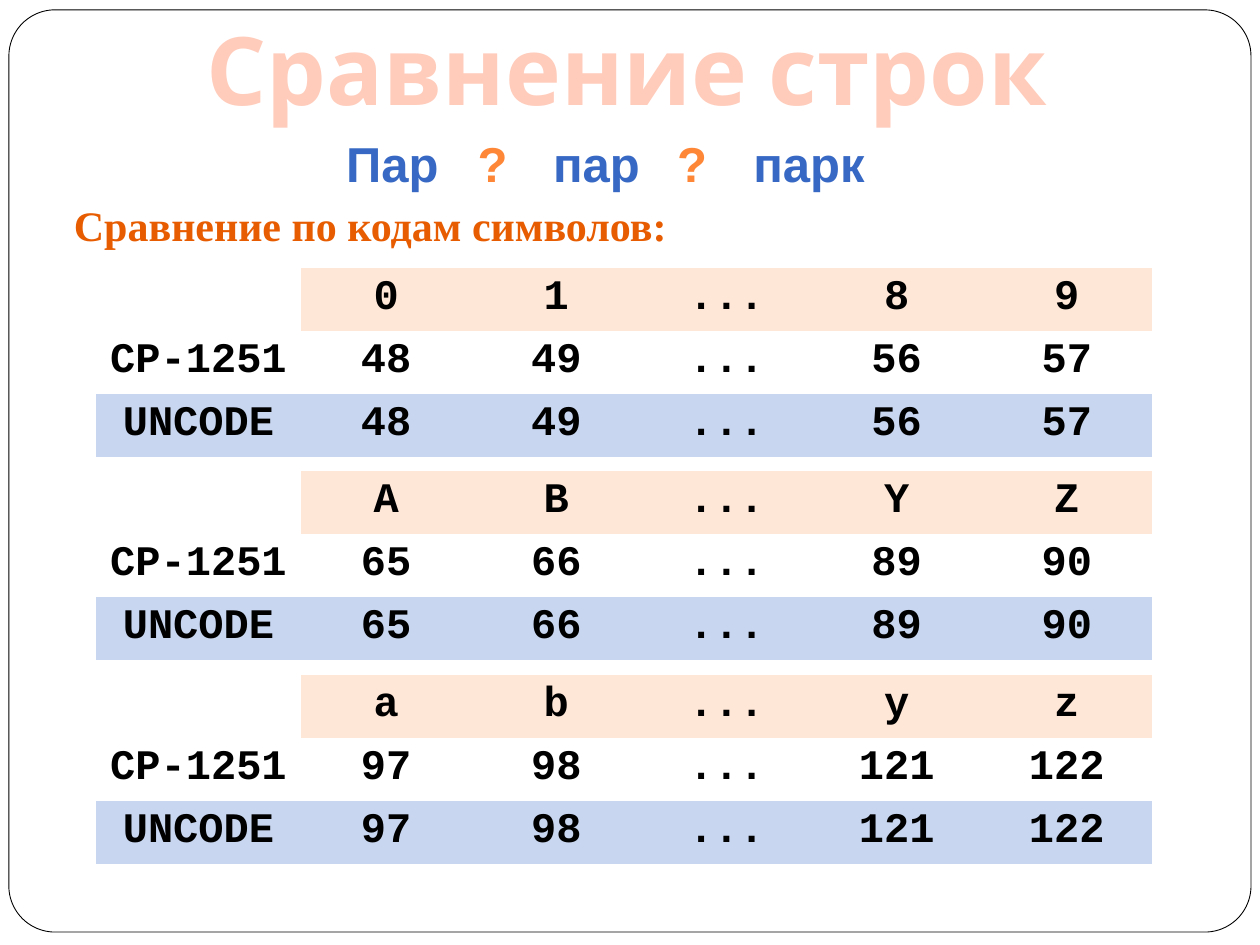
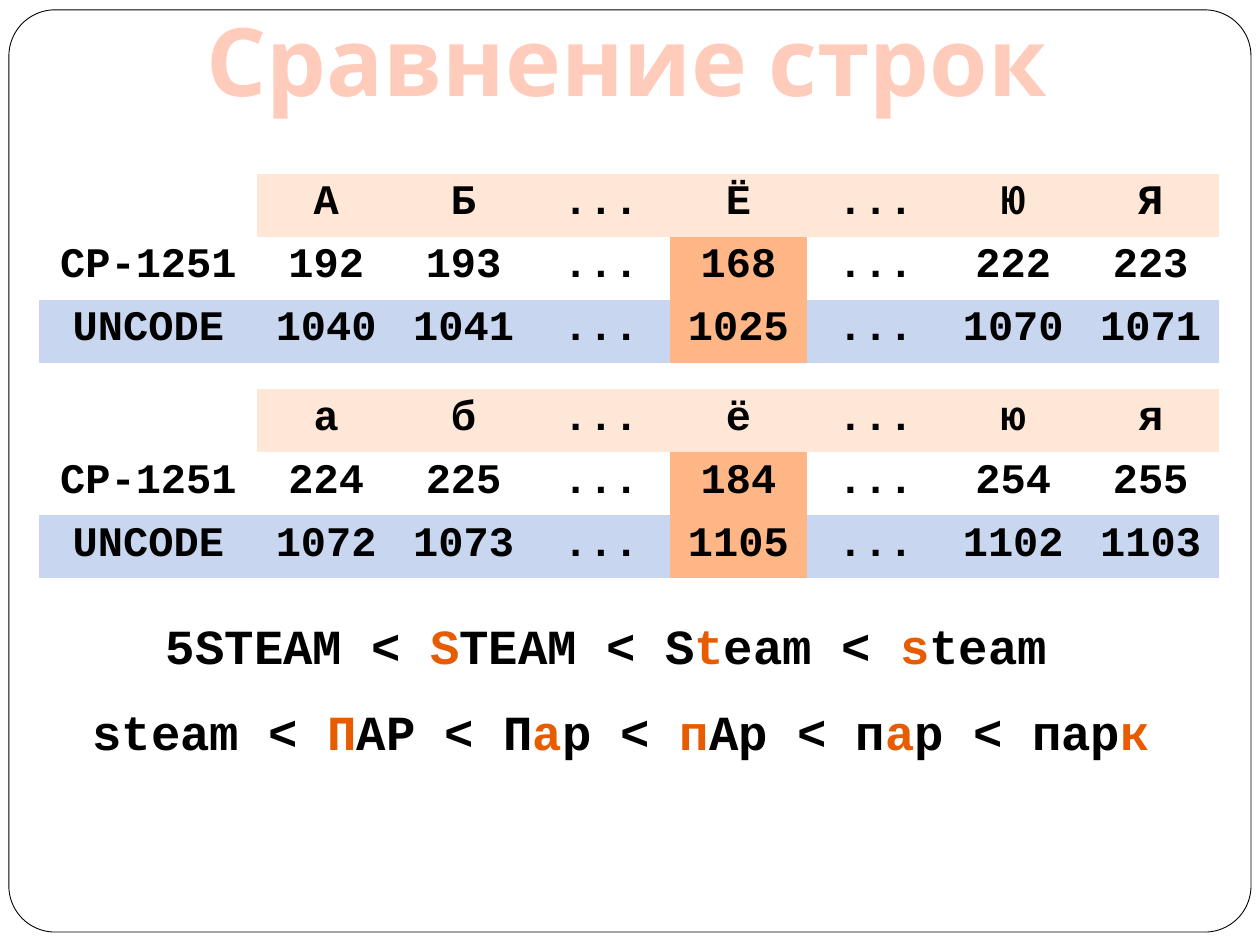
from dataclasses import dataclass

from pptx import Presentation
from pptx.dml.color import RGBColor
from pptx.enum.shapes import MSO_SHAPE
from pptx.enum.text import MSO_ANCHOR, MSO_AUTO_SIZE, PP_ALIGN
from pptx.util import Cm, Pt

ROUNDED = MSO_SHAPE.ROUNDED_RECTANGLE
BOTTOM = MSO_ANCHOR.BOTTOM
NO_FIT, GROW = MSO_AUTO_SIZE.NONE, MSO_AUTO_SIZE.SHAPE_TO_FIT_TEXT
LEFT, CENTER = PP_ALIGN.LEFT, PP_ALIGN.CENTER
TITLE_ONLY = 5
PLAIN_TABLE_STYLE = "{2D5ABB26-0587-4C30-8999-92F81FD0307C}"


@dataclass(frozen=True)
class Theme:
    """Colours, fonts and type sizes shared by the slides."""

    paper: str = "FFFFFF"
    ink: str = "000000"
    title: str = "FFCCBB"
    word: str = "3668C4"
    question: str = "FE8637"
    accent: str = "E75C01"
    symbol_row: str = "FFE7D7"
    unicode_row: str = "C8D6F0"
    exception: str = "FEB687"
    title_font: str = "Cabin"
    word_font: str = "Arial"
    heading_font: str = "Times New Roman"
    code_font: str = "Courier New"
    title_size: int = 54
    example_size: int = 28
    body_size: int = 24


THEME = Theme()


def rgb(colour):
    """Turn a hex colour into an RGBColor."""
    return RGBColor.from_string(colour)


def add_run(paragraph, text, font, size, colour):
    """Append one bold run to a paragraph."""
    run = paragraph.add_run()
    run.text = text
    run.font.name, run.font.size, run.font.bold = font, Pt(size), True
    run.font.color.rgb = rgb(colour)


def add_frame(slide):
    """Draw the rounded frame and move it to the back of the slide master."""
    frame = slide.shapes.add_shape(ROUNDED, Cm(0.18), Cm(0.2), Cm(25.04), Cm(18.59))
    frame.adjustments[0] = 0.05
    frame.shadow.inherit = False
    frame.fill.solid()
    frame.fill.fore_color.rgb = rgb(THEME.paper)
    frame.line.color.rgb = rgb(THEME.ink)
    frame.line.width = Pt(0.5)
    slide.slide_layout.slide_master.shapes.element.insert(2, frame.element)


def add_titled_slide(deck, text, top):
    """Add a slide with its title placeholder filled and placed."""
    slide = deck.slides.add_slide(deck.slide_layouts[TITLE_ONLY])
    title = slide.shapes.title
    title.left, title.top, title.width, title.height = Cm(1), Cm(top), Cm(23.27), Cm(2.18)
    frame = title.text_frame
    frame.auto_size, frame.vertical_anchor = NO_FIT, BOTTOM
    frame.margin_bottom = Cm(0.25)
    frame.paragraphs[0].alignment = CENTER
    add_run(frame.paragraphs[0], text, THEME.title_font, THEME.title_size, THEME.title)
    return slide


def add_text(shapes, box, runs, font, size, align=LEFT, wrap=False, extra_right=0):
    """Add a text box holding one line of (text, colour) runs."""
    frame = shapes.add_textbox(*map(Cm, box)).text_frame
    frame.word_wrap, frame.auto_size = wrap, GROW
    frame.margin_right = Cm(0.25 + extra_right)
    frame.paragraphs[0].alignment = align
    for text, colour in runs:
        add_run(frame.paragraphs[0], text, font, size, colour)


def add_code_table(slide, left, top, label_width, code_width, rows, exception=None):
    """Add a table of symbols and their codes, marking an exceptional column."""
    labels = ("", "CP-1251", "UNCODE")
    fills = (THEME.symbol_row, None, THEME.unicode_row)
    columns = len(rows[0].split()) + 1
    width = label_width + code_width * (columns - 1)
    table = slide.shapes.add_table(
        len(rows), columns, Cm(left), Cm(top), Cm(width), Cm(1.27 * len(rows))
    ).table
    table.first_row = table.horz_banding = False
    table._tbl.tblPr[0].text = PLAIN_TABLE_STYLE
    for index, column in enumerate(table.columns):
        column.width = Cm(code_width if index else label_width)
    for row, (label, codes, row_fill) in enumerate(zip(labels, rows, fills)):
        for index, text in enumerate([label, *codes.split()]):
            cell = table.cell(row, index)
            fill = THEME.exception if row and index == exception else row_fill
            if fill and text:
                cell.fill.solid()
                cell.fill.fore_color.rgb = rgb(fill)
            else:
                cell.fill.background()
            if text:
                paragraph = cell.text_frame.paragraphs[0]
                paragraph.alignment = CENTER
                add_run(paragraph, text, THEME.code_font, THEME.body_size, THEME.ink)


def add_comparison(slide, top, marked, extra_right=0):
    """Add a chain of compared strings, with the parts between asterisks accented."""
    runs = [
        (part, THEME.accent if index % 2 else THEME.ink)
        for index, part in enumerate(marked.split("*"))
    ]
    add_text(slide.shapes, (1.14, top, 22.76, 1.45), runs, THEME.code_font,
             THEME.example_size, CENTER, True, extra_right)


def build_latin_slide(deck, title):
    """Build the slide on digits and Latin letters."""
    slide = add_titled_slide(deck, title, 0.58)
    add_frame(slide)
    puzzle = slide.shapes.add_group_shape()
    for text, left, width in (("Пар", 6.73, 2.39), ("?", 9.37, 1.12), ("пар", 10.9, 2.29),
                              ("?", 13.39, 1.12), ("парк", 14.94, 2.77)):
        asks = text == "?"
        add_text(puzzle.shapes, (left, 2.57, width, 1.45),
                 [(text, THEME.question if asks else THEME.word)],
                 THEME.word_font, THEME.example_size, CENTER if asks else LEFT)
    add_text(slide.shapes, (1.24, 3.89, 13.23, 1.27),
             [("Сравнение по кодам символов:", THEME.accent)],
             THEME.heading_font, THEME.body_size)
    alphabets = (
        ("0 1 ... 8 9", "48 49 ... 56 57"),
        ("A B ... Y Z", "65 66 ... 89 90"),
        ("a b ... y z", "97 98 ... 121 122"),
    )
    for index, (symbols, codes) in enumerate(alphabets):
        add_code_table(slide, 1.93, 5.4 + 4.1 * index, 4.14, 3.43, (symbols, codes, codes))


def build_cyrillic_slide(deck, title):
    """Build the slide on Cyrillic letters and compared strings."""
    slide = add_titled_slide(deck, title, 0.4)
    alphabets = (
        ("А Б ... Ё ... Ю Я", "192 193 ... 168 ... 222 223",
         "1040 1041 ... 1025 ... 1070 1071"),
        ("а б ... ё ... ю я", "224 225 ... 184 ... 254 255",
         "1072 1073 ... 1105 ... 1102 1103"),
    )
    for index, rows in enumerate(alphabets):
        add_code_table(slide, 0.79, 3.5 + 4.35 * index, 4.4, 2.77, rows, exception=4)
    add_comparison(slide, 12.29, "5STEAM < *S*TEAM < S*t*eam < *s*team", 0.59)
    add_comparison(slide, 14.02, "steam < *П*АР < П*а*р < *п*Ар < п*а*р < пар*к*")


def main():
    """Build and save the presentation."""
    deck = Presentation()
    deck.slide_width, deck.slide_height = Cm(25.4), Cm(19.05)
    title = "Сравнение строк"
    build_latin_slide(deck, title)
    build_cyrillic_slide(deck, title)
    deck.save("out.pptx")


if __name__ == "__main__":
    main()
